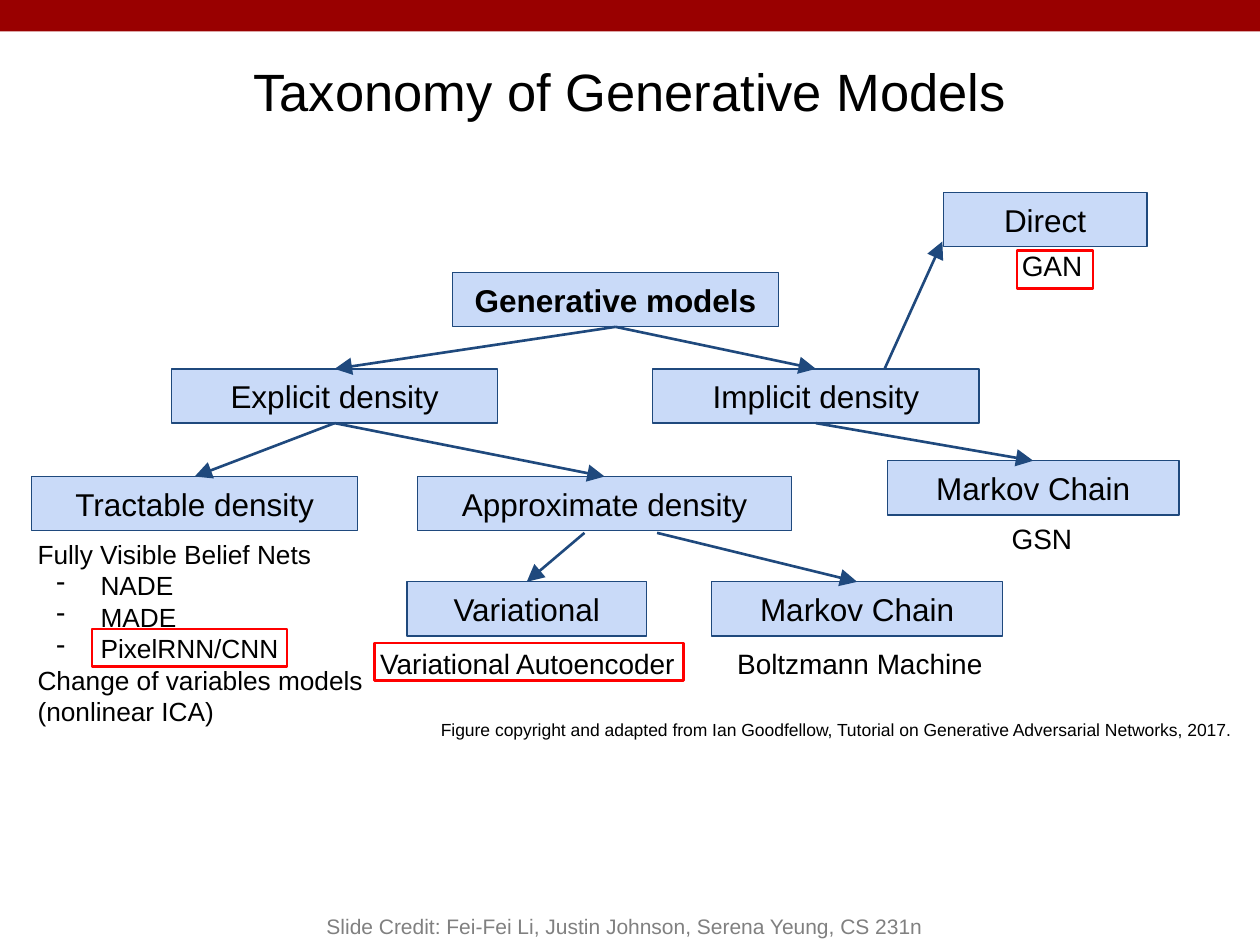
from dataclasses import dataclass
from typing import Optional

from lxml import etree
from pptx import Presentation
from pptx.dml.color import RGBColor
from pptx.enum.shapes import MSO_CONNECTOR, MSO_SHAPE
from pptx.enum.text import MSO_ANCHOR as Anchor, PP_ALIGN as Align
from pptx.oxml.ns import qn
from pptx.util import Pt

BLACK = RGBColor(0x00, 0x00, 0x00)
WHITE = RGBColor(0xFF, 0xFF, 0xFF)
GRAY = RGBColor(0x80, 0x80, 0x80)
CRIMSON = RGBColor(0x99, 0x00, 0x00)
RED = RGBColor(0xFF, 0x00, 0x00)
NAVY = RGBColor(0x1F, 0x49, 0x7D)
PALE_BLUE = RGBColor(0xC9, 0xDA, 0xF8)

FONT = "Arial"
INSET = 7.2
NODE_HEIGHT = 31
HIGHLIGHT_HEIGHT = 21.6
TOP, BOTTOM = 0, 2


@dataclass
class Node:
    key: str
    text: str
    left: float
    top: float
    width: float
    bold: bool = False


@dataclass
class Label:
    lines: list[str]
    left: float
    top: float
    width: float
    height: float = 38.9
    size: float = 16
    color: RGBColor = BLACK
    align: Align = Align.LEFT
    anchor: Anchor = Anchor.TOP
    margin: float = INSET


@dataclass
class Arrow:
    """An arrow without a start or end point is glued to that node."""
    source: str
    target: str
    start: Optional[tuple[float, float]] = None
    end: Optional[tuple[float, float]] = None


@dataclass
class Highlight:
    left: float
    top: float
    width: float


NODES = [
    Node("root", "Generative models", 258.5, 155.8, 186.5, bold=True),
    Node("explicit", "Explicit density", 98, 210.8, 186.5),
    Node("implicit", "Implicit density", 373, 210.8, 186.5),
    Node("direct", "Direct", 539, 110, 116.5),
    Node("tractable", "Tractable density", 18, 272.3, 186.5),
    Node("approximate", "Approximate density", 238.5, 272.3, 214),
    Node("implicit chain", "Markov Chain", 507.2, 263.3, 166.5),
    Node("variational", "Variational", 232.5, 332.5, 137),
    Node("approximate chain", "Markov Chain", 406.6, 332.5, 166.5),
]

ARROWS = [
    Arrow("explicit", "tractable"),
    Arrow("explicit", "approximate"),
    Arrow("root", "explicit"),
    Arrow("root", "implicit"),
    Arrow("implicit", "implicit chain"),
    Arrow("implicit", "direct", start=(505.5, 210.8), end=(538.5, 138)),
    Arrow("approximate", "approximate chain", start=(375.5, 304.5)),
    Arrow("approximate", "variational", start=(334, 304.5)),
]

# Lines that start with "- " become bullets
LABELS = [
    Label(["Fully Visible Belief Nets", "- NADE", "- MADE", "- PixelRNN/CNN",
           "Change of variables models (nonlinear ICA)"],
          14.4, 300.2, 219, size=15),
    Label(["Taxonomy of Generative Models"], 36, 18, 648, 67.7, size=30,
          align=Align.CENTER, anchor=Anchor.MIDDLE),
    Label(["Variational Autoencoder"], 210.2, 362.2, 230.5),
    Label(["Boltzmann Machine"], 414.2, 362.2, 163),
    Label(["GSN"], 571, 291, 51),
    Label(["GAN"], 576.8, 134.6, 51),
    Label(["Figure copyright and adapted from Ian Goodfellow, Tutorial on "
           "Generative Adversarial Networks, 2017."], 244.8, 404.8, 473, size=10),
    Label(["Slide Credit: Fei-Fei Li, Justin Johnson, Serena Yeung, CS 231n"],
          144, 504, 426, 36, size=12, color=GRAY, align=Align.CENTER,
          anchor=Anchor.BOTTOM, margin=3.6),
]

HIGHLIGHTS = [
    Highlight(52.5, 359.4, 111.5),
    Highlight(214, 367.4, 176.5),
    Highlight(581.2, 143.3, 43.4),
]


def set_frame(frame, anchor: Anchor, margin: float) -> None:
    frame.word_wrap = True
    frame.vertical_anchor = anchor
    frame.margin_left = frame.margin_right = Pt(INSET)
    frame.margin_top = frame.margin_bottom = Pt(margin)


def set_font(para, size: float, color: RGBColor, bold: bool = False) -> None:
    para.font.name = FONT
    para.font.size = Pt(size)
    para.font.color.rgb = color
    para.font.bold = bold


def add_rectangle(page, left: float, top: float, width: float, height: float,
                  fill: Optional[RGBColor] = None,
                  line: Optional[RGBColor] = None, weight: float = 1.5):
    box = page.shapes.add_shape(MSO_SHAPE.RECTANGLE, Pt(left), Pt(top), Pt(width), Pt(height))
    box.shadow.inherit = False
    if fill is None:
        box.fill.background()
    else:
        box.fill.solid()
        box.fill.fore_color.rgb = fill
    if line is None:
        box.line.fill.background()
    else:
        box.line.color.rgb = line
        box.line.width = Pt(weight)
    return box


def add_node(page, node: Node):
    box = add_rectangle(page, node.left, node.top, node.width, NODE_HEIGHT,
                        PALE_BLUE, NAVY, 0.75)
    set_frame(box.text_frame, Anchor.MIDDLE, INSET)
    para = box.text_frame.paragraphs[0]
    para.text = node.text
    para.alignment = Align.CENTER
    set_font(para, 18, BLACK, node.bold)
    return box


def add_bullet(para) -> None:
    properties = para._p.get_or_add_pPr()
    properties.set("marL", str(Pt(36)))
    properties.set("indent", str(-Pt(25.2)))
    etree.SubElement(properties, qn("a:buChar")).set("char", "-")


def add_label(page, label: Label) -> None:
    box = page.shapes.add_textbox(Pt(label.left), Pt(label.top), Pt(label.width), Pt(label.height))
    frame = box.text_frame
    set_frame(frame, label.anchor, label.margin)
    for index, line in enumerate(label.lines):
        para = frame.add_paragraph() if index else frame.paragraphs[0]
        para.text = line.removeprefix("- ")
        para.alignment = label.align
        if line.startswith("- "):
            add_bullet(para)
        set_font(para, label.size, label.color)


def add_arrow(page, arrow: Arrow, boxes: dict) -> None:
    start, end = arrow.start or (0, 0), arrow.end or (0, 0)
    line = page.shapes.add_connector(MSO_CONNECTOR.STRAIGHT, *map(Pt, start + end))
    if arrow.start is None:
        line.begin_connect(boxes[arrow.source], BOTTOM)
    if arrow.end is None:
        line.end_connect(boxes[arrow.target], TOP)
    line.line.color.rgb = NAVY
    line.line.width = Pt(1.5)
    etree.SubElement(line.line._get_or_add_ln(), qn("a:tailEnd"),
                     type="triangle", w="lg", len="lg")
    etree.SubElement(line._element.spPr, qn("a:effectLst"))


def main() -> None:
    deck = Presentation()
    deck.slide_width, deck.slide_height = Pt(720), Pt(540)
    page = deck.slides.add_slide(deck.slide_layouts[6])
    page.background.fill.solid()
    page.background.fill.fore_color.rgb = WHITE

    # Top band
    add_rectangle(page, 0, 0, 720, 18, CRIMSON)

    # Taxonomy tree
    boxes = {node.key: add_node(page, node) for node in NODES}
    for arrow in ARROWS:
        add_arrow(page, arrow, boxes)

    # Title, examples and credits
    for label in LABELS:
        add_label(page, label)

    # Red frames around the highlighted models
    for mark in HIGHLIGHTS:
        add_rectangle(page, mark.left, mark.top, mark.width, HIGHLIGHT_HEIGHT, line=RED)

    deck.save("out.pptx")


if __name__ == "__main__":
    main()
